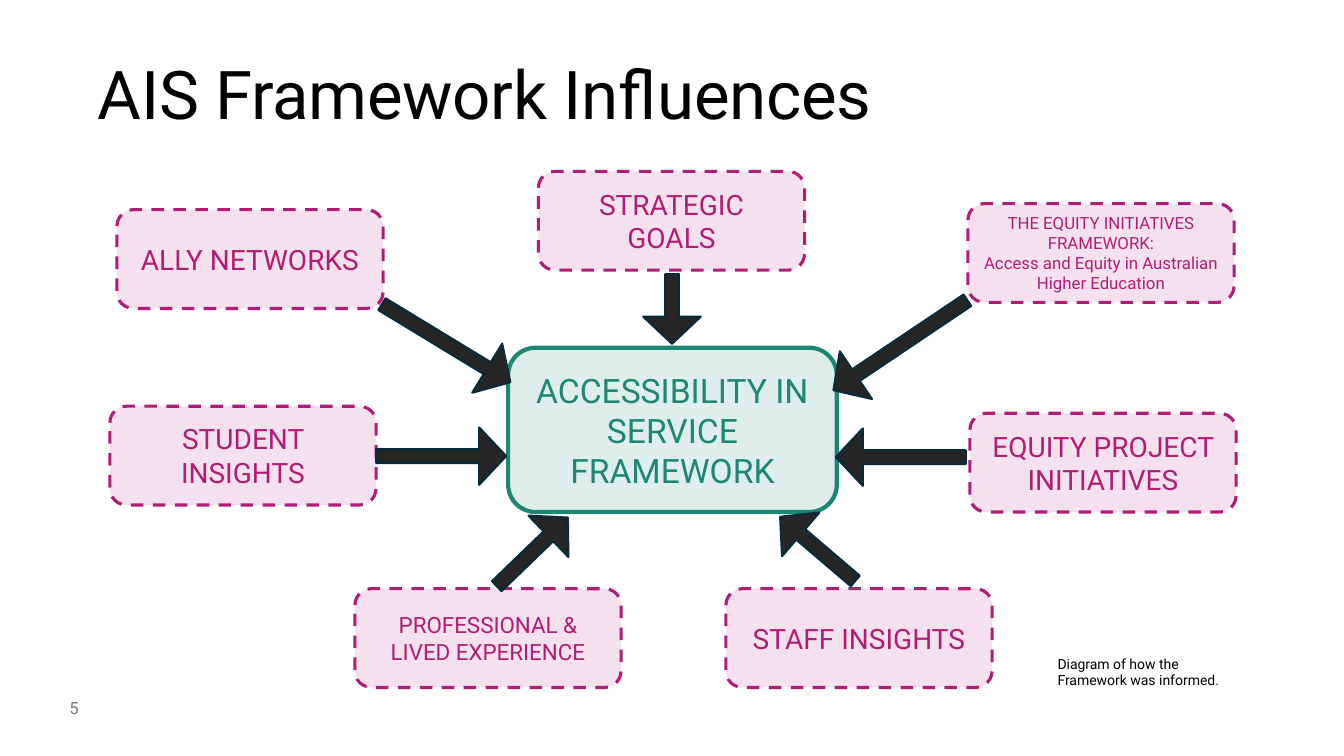
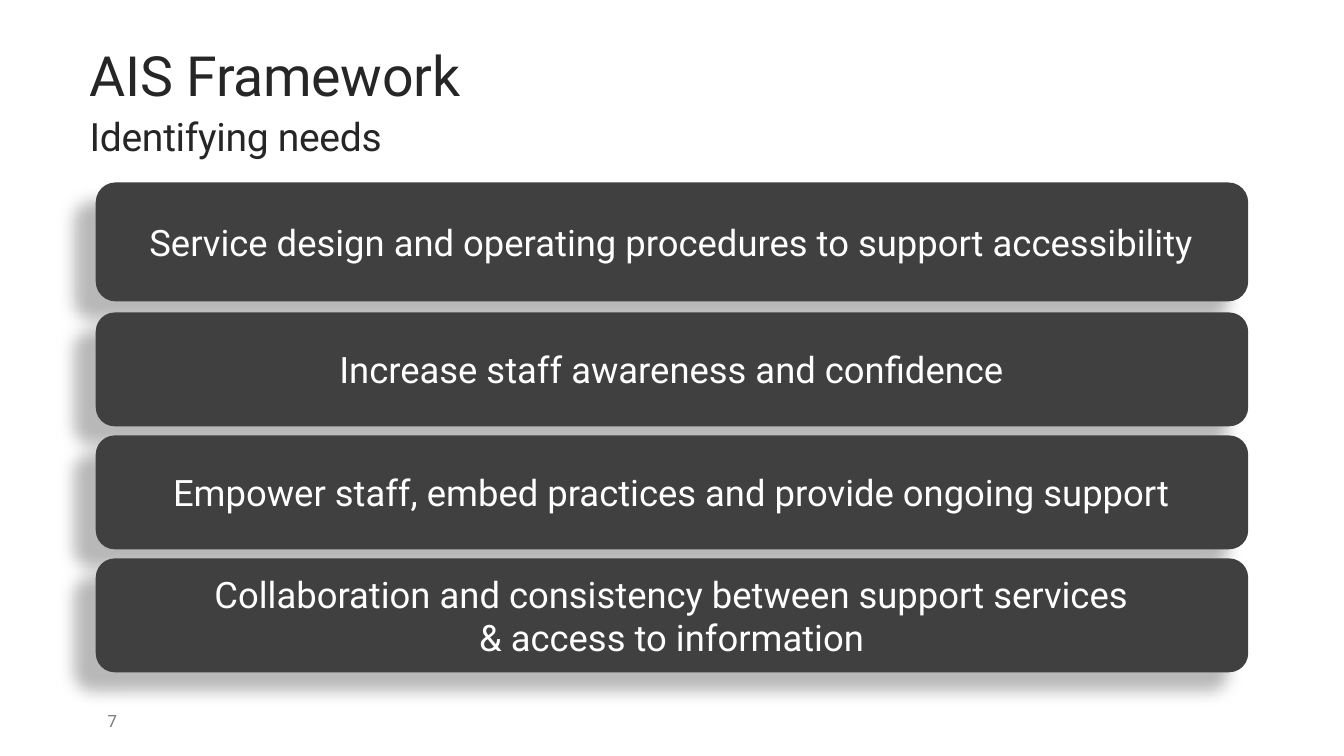
from lxml.etree import SubElement
from pptx import Presentation
from pptx.dml.color import RGBColor
from pptx.enum.dml import MSO_LINE
from pptx.enum.shapes import MSO_SHAPE
from pptx.enum.text import MSO_ANCHOR, PP_ALIGN
from pptx.oxml.ns import qn
from pptx.util import Emu, Pt

EMU_PER_PX = 9144
FONT = "Roboto"
BLACK, WHITE, CHARCOAL, GREY = "000000", "FFFFFF", "262626", "797979"
GREEN, MAGENTA, NAVY, SLATE = "1D8773", "B11D75", "092A39", "404040"
CENTERED = {"alignment": PP_ALIGN.CENTER}
NUMBERED = {"alignment": PP_ALIGN.RIGHT}
TITLED = {"line_spacing": 0.9, "space_after": Pt(6)}


def px(length):
    """Turn whole pixels, 100 to the inch, into EMU."""
    return Emu(length * EMU_PER_PX)


def color(hex_value):
    """Turn a hex string into a colour."""
    return RGBColor.from_string(hex_value)


class Deck:
    """Holds the shared style and the slide being drawn."""

    def __init__(self):
        """Start a wide presentation."""
        self.presentation = Presentation()
        self.presentation.slide_width = px(1333)
        self.presentation.slide_height = px(750)
        self.slide = None

    def new_slide(self):
        """Add a blank slide and make it current."""
        self.slide = self.presentation.slides.add_slide(self.presentation.slide_layouts[6])

    def set_lines(self, shape, lines, text_color, paragraph_format, anchor=MSO_ANCHOR.MIDDLE):
        """Fill a shape with (text, size) paragraphs."""
        frame = shape.text_frame
        frame.word_wrap = True
        frame.vertical_anchor = anchor
        for index, (text, size) in enumerate(lines):
            paragraph = frame.add_paragraph() if index else frame.paragraphs[0]
            run = paragraph.add_run()
            run.text = text
            run.font.color.rgb = color(text_color)
            for target, values in (
                (paragraph, paragraph_format),
                (run.font, {"name": FONT, "size": Pt(size)}),
            ):
                for name, value in values.items():
                    setattr(target, name, value)

    def text(self, bounds, lines, text_color, paragraph_format, anchor=MSO_ANCHOR.MIDDLE):
        """Add a text box."""
        shape = self.slide.shapes.add_textbox(*map(px, bounds))
        self.set_lines(shape, lines, text_color, paragraph_format, anchor)
        return shape

    def title(self, bounds, lines, text_color):
        """Add a slightly tightened title."""
        shape = self.text(bounds, lines, text_color, TITLED)
        for properties in shape.element.iter(qn("a:rPr")):
            properties.set("spc", "-20")

    def page_number(self, bounds, number):
        """Add the grey page number."""
        self.text(bounds, [(number, 12)], GREY, NUMBERED)

    def shape(self, kind, bounds, fill, line=None, line_format=None):
        """Add a filled preset shape with an optional outline."""
        shape = self.slide.shapes.add_shape(kind, *map(px, bounds))
        shape.shadow.inherit = False
        shape.fill.solid()
        shape.fill.fore_color.rgb = color(fill)
        if line is None:
            shape.line.fill.background()
        else:
            shape.line.color.rgb = color(line)
            for name, value in line_format.items():
                setattr(shape.line, name, value)
        return shape

    def tinted_box(self, bounds, lines, tint, opacity, line_format):
        """Add a rounded box with a translucent fill and matching text."""
        shape = self.shape(MSO_SHAPE.ROUNDED_RECTANGLE, bounds, tint, tint, line_format)
        fill = shape.element.spPr.find(qn("a:solidFill"))
        SubElement(fill[0], qn("a:alpha"), val=str(opacity * 1000))
        self.set_lines(shape, lines, tint, CENTERED)

    def influence(self, left, top, lines):
        """Add a dashed influence box."""
        line_format = {"width": Pt(2.25), "dash_style": MSO_LINE.DASH}
        self.tinted_box((left, top, 264, 98), lines, MAGENTA, 13, line_format)

    def arrow(self, bounds, rotation):
        """Add a dark block arrow."""
        shape = self.shape(MSO_SHAPE.RIGHT_ARROW, bounds, CHARCOAL, NAVY, {"width": Pt(1.5)})
        shape.rotation = rotation
        for index, value in enumerate((0.24, 0.47)):
            shape.adjustments[index] = value

    def bar(self, top, height, lines):
        """Add a dark bar with a soft shadow."""
        shape = self.shape(MSO_SHAPE.ROUNDED_RECTANGLE, (95, top, 1143, height), SLATE)
        effects = shape.element.spPr.find(qn("a:effectLst"))
        shadow = SubElement(effects, qn("a:outerShdw"), blurRad=str(Pt(11.8)),
                            dist=str(Pt(19.7)), dir=str(141 * 60000), rotWithShape="0")
        shade = SubElement(shadow, qn("a:srgbClr"), val=BLACK)
        SubElement(shade, qn("a:alpha"), val="28000")
        self.set_lines(shape, [(line, 26) for line in lines], WHITE, CENTERED)


def build_influences(deck):
    """Draw the diagram of influences around the framework."""
    deck.new_slide()
    deck.page_number((56, 682, 32, 40), "5")
    deck.title((87, 39, 975, 115), [("AIS Framework Influences", 48)], BLACK)
    deck.tinted_box((504, 345, 326, 163), [("ACCESSIBILITY IN SERVICE FRAMEWORK", 24)],
                    GREEN, 14, {"width": Pt(3)})
    for left, top, lines in (
        (534, 170, [("STRATEGIC GOALS", 20)]),
        (116, 208, [("ALLY NETWORKS", 20)]),
        (109, 403, [("STUDENT INSIGHTS", 20)]),
        (352, 584, [("PROFESSIONAL & LIVED EXPERIENCE", 16)]),
        (720, 584, [("STAFF INSIGHTS", 20)]),
        (962, 410, [("EQUITY PROJECT INITIATIVES", 20)]),
        (960, 202, [("THE EQUITY INITIATIVES FRAMEWORK:", 12),
                    ("Access and Equity in Australian Higher Education", 12)]),
    ):
        deck.influence(left, top, lines)
    for left, top, length, rotation in (
        (813, 314, 160, 146.1),
        (373, 424, 129, 0),
        (368, 312, 149, 31.3),
        (829, 425, 129, 180),
        (632, 278, 69, 90),
        (479, 519, 98, 316),
        (762, 516, 98, 220.5),
    ):
        deck.arrow((left, top, length, 57), rotation)
    deck.text((1039, 645, 211, 44), [("Diagram of how the Framework was informed.", 10)],
              BLACK, {}, MSO_ANCHOR.TOP)


def build_needs(deck):
    """Draw the list of needs."""
    deck.new_slide()
    deck.title((79, 47, 745, 113), [("AIS Framework", 39.6), ("Identifying needs", 27.9)], CHARCOAL)
    deck.bar(181, 118, ["Service design and operating procedures to support accessibility"])
    for index, lines in enumerate((
        ["Increase staff awareness and confidence"],
        ["Empower staff, embed practices and provide ongoing support"],
        ["Collaboration and consistency between support services", "& access to information"],
    )):
        deck.bar(310 + 122 * index, 113, lines)
    deck.page_number((86, 695, 40, 40), "7")


def main():
    """Build and save the slides."""
    deck = Deck()
    build_influences(deck)
    build_needs(deck)
    deck.presentation.save("out.pptx")


if __name__ == "__main__":
    main()
